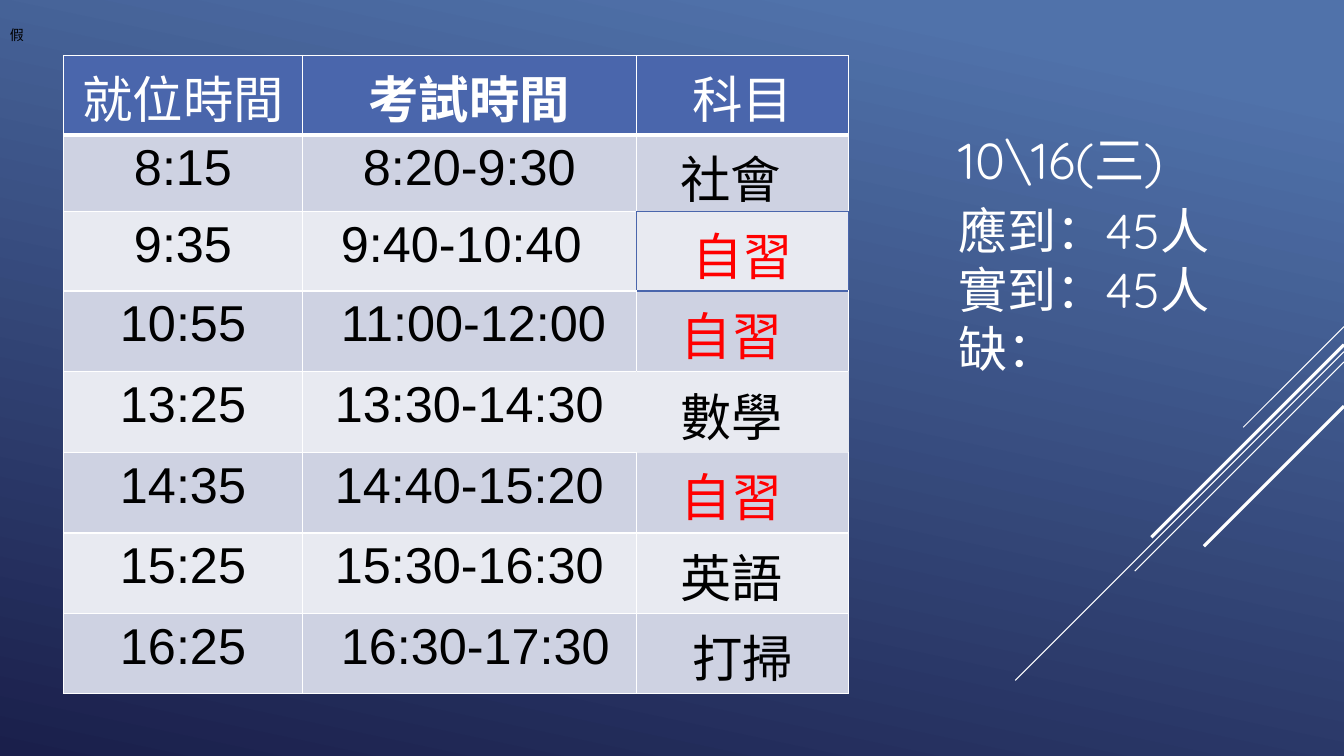
from lxml import etree
from pptx import Presentation
from pptx.dml.color import RGBColor
from pptx.enum.shapes import MSO_CONNECTOR
from pptx.enum.text import MSO_AUTO_SIZE, PP_ALIGN
from pptx.oxml import parse_xml
from pptx.oxml.ns import nsdecls, qn
from pptx.util import Inches, Pt

STRAIGHT = MSO_CONNECTOR.STRAIGHT
GROW = MSO_AUTO_SIZE.SHAPE_TO_FIT_TEXT
CENTER, LEFT = PP_ALIGN.CENTER, PP_ALIGN.LEFT

COLORS = {
    "sky": "5072AA", "night": "1A1F4B", "white": "FFFFFF", "black": "000000",
    "red": "FF0000", "header": "4A66AC", "band": "CED2E2", "pale": "E8EAF1",
}

# Cell formats: font values, alignment and extra left indent in inches
BODY = {"font": {"name": "Arial", "size": Pt(36), "bold": False},
        "color": "black", "align": CENTER, "indent": 0}
LARGER = {**BODY["font"], "size": Pt(36.5)}
FORMATS = {
    "head": {**BODY, "color": "white"},
    "strong": {**BODY, "color": "white", "font": {**BODY["font"], "bold": True}},
    "body": BODY,
    "time": {**BODY, "align": LEFT, "indent": 0.28},
    "first": {**BODY, "align": LEFT, "indent": 0.34},
    "subject": {**BODY, "align": LEFT, "indent": 0.34, "font": LARGER},
    "study": {**BODY, "color": "red"},
    "study left": {**BODY, "color": "red", "align": LEFT, "indent": 0.34, "font": LARGER},
}

TIMETABLE = [
    [("就位時間", "head"), ("考試時間", "strong"), ("科目", "head")],
    [("8:15", "body"), ("8:20-9:30", "body"), ("社會", "first")],
    [("9:35", "body"), ("9:40-10:40", "time"), ("自習", "study")],
    [("10:55", "body"), ("11:00-12:00", "time"), ("自習", "study left")],
    [("13:25", "body"), ("13:30-14:30", "body"), ("數學", "subject")],
    [("14:35", "body"), ("14:40-15:20", "body"), ("自習", "study left")],
    [("15:25", "body"), ("15:30-16:30", "body"), ("英語", "subject")],
    [("16:25", "body"), ("16:30-17:30", "time"), ("打掃", "body")],
]
COLUMN_WIDTHS = [17.78, 24.83, 15.83]
ROW_HEIGHTS = [10.53, 10.13, 10.53, 10.67, 10.67, 10.67, 10.67, 10.53]

# Cells with their own frame: (row, column) -> colour and sides
FRAMES = {(2, 2): ("header", "LRTB"), (4, 2): ("pale", "LRB")}
NEIGHBOURS = {"L": (0, -1, "R"), "R": (0, 1, "L"), "T": (-1, 0, "B"), "B": (1, 0, "T")}

# Diagonal lines from the right edge: top, drop (percent of height), width
DIAGONALS = [(43.2, 13.33, 0.75), (46.53, 43.47, 0.75), (47.87, 27.67, 0.75),
             (45.6, 25.47, 2.25), (53.73, 18.53, 2.25)]


def border_colors():
    """Framed sides, each shared with the adjoining cell."""
    colors = {}
    for (row, column), (color, sides) in FRAMES.items():
        for side in sides:
            down, across, opposite = NEIGHBOURS[side]
            colors[row, column, side] = color
            colors[row + down, column + across, opposite] = color
    return colors


class SlideBuilder:
    """Places elements on a slide, in percent of its width and height."""

    def __init__(self, presentation):
        self.width, self.height = presentation.slide_width, presentation.slide_height
        self.slide = presentation.slides.add_slide(presentation.slide_layouts[6])

    def x(self, percent):
        return round(self.width * percent / 100)

    def y(self, percent):
        return round(self.height * percent / 100)

    def color(self, name):
        return RGBColor.from_string(COLORS[name])

    def background(self, start, end, angle):
        fill = self.slide.background.fill
        fill.gradient()
        fill.gradient_angle = angle
        for stop, name, position in zip(fill.gradient_stops, (start, end), (0.1, 1)):
            stop.color.rgb = self.color(name)
            stop.position = position

    def diagonal(self, top, drop, weight):
        run = self.y(drop)
        line = self.slide.shapes.add_connector(
            STRAIGHT, self.width, self.y(top), self.width - run, self.y(top) + run)
        line.line.color.rgb = self.color("white")
        line.line.width = Pt(weight)
        etree.SubElement(line._element.spPr, qn("a:effectLst"))

    def add_text_run(self, paragraph, text, color, font):
        run = paragraph.add_run()
        run.text = text
        for name, value in font.items():
            setattr(run.font, name, value)
        run.font.color.rgb = self.color(color)

    def text(self, left, top, width, height, lines, color, font, inset=0.05):
        box = self.slide.shapes.add_textbox(
            self.x(left), self.y(top), self.x(width), self.y(height))
        frame = box.text_frame
        settings = {"word_wrap": True, "auto_size": GROW,
                    "margin_top": Inches(inset), "margin_bottom": Inches(inset)}
        for name, value in settings.items():
            setattr(frame, name, value)
        for index, line in enumerate(lines):
            paragraph = frame.add_paragraph() if index else frame.paragraphs[0]
            self.add_text_run(paragraph, line, color, font)

    def border(self, cell, side, color, weight):
        cell._tc.get_or_add_tcPr().append(parse_xml(
            f'<a:ln{side} {nsdecls("a")} w="{Pt(weight)}"><a:solidFill>'
            f'<a:srgbClr val="{COLORS[color]}"/></a:solidFill></a:ln{side}>'))

    def table(self, left, top, widths, heights, rows):
        table = self.slide.shapes.add_table(
            len(rows), len(widths), self.x(left), self.y(top),
            self.x(sum(widths)), self.y(sum(heights))).table
        for column, width in zip(table.columns, widths):
            column.width = self.x(width)
        for row, height in zip(table.rows, heights):
            row.height = self.y(height)
        framed = border_colors()
        for r, row in enumerate(rows):
            for c, (text, style) in enumerate(row):
                cell, style = table.cell(r, c), FORMATS[style]
                for side in "LRTB":
                    thick = (r, side) in ((0, "B"), (1, "T"))
                    self.border(cell, side, framed.get((r, c, side), "white"), 3 if thick else 1)
                cell.fill.solid()
                fill = "header" if r == 0 else ("pale", "band")[r % 2]
                cell.fill.fore_color.rgb = self.color(fill)
                cell.margin_left = Inches(0.1 + style["indent"])
                paragraph = cell.text_frame.paragraphs[0]
                paragraph.alignment = style["align"]
                self.add_text_run(paragraph, text, style["color"], style["font"])


def main():
    presentation = Presentation()
    presentation.slide_width, presentation.slide_height = Inches(13.33), Inches(7.5)
    builder = SlideBuilder(presentation)

    # Backdrop
    builder.background("sky", "night", 258)
    for diagonal in DIAGONALS:
        builder.diagonal(*diagonal)

    # Date and attendance
    builder.text(70.59, 16.4, 38.86, 9.47, ["10\\16(三)"], "white",
                 {"name": "Quicksand", "size": Pt(36)})
    builder.text(70.59, 25.87, 20.86, 24.93, ["應到：45人", "實到：45人", "缺："], "white",
                 {"name": "Quicksand", "size": Pt(35)})
    builder.text(0, 2.4, 24.61, 4.93, ["假"], "black",
                 {"name": "Arial", "size": Pt(10)}, inset=0.1)

    # Exam timetable
    builder.table(4.73, 7.33, COLUMN_WIDTHS, ROW_HEIGHTS, TIMETABLE)

    presentation.save("out.pptx")


if __name__ == "__main__":
    main()
